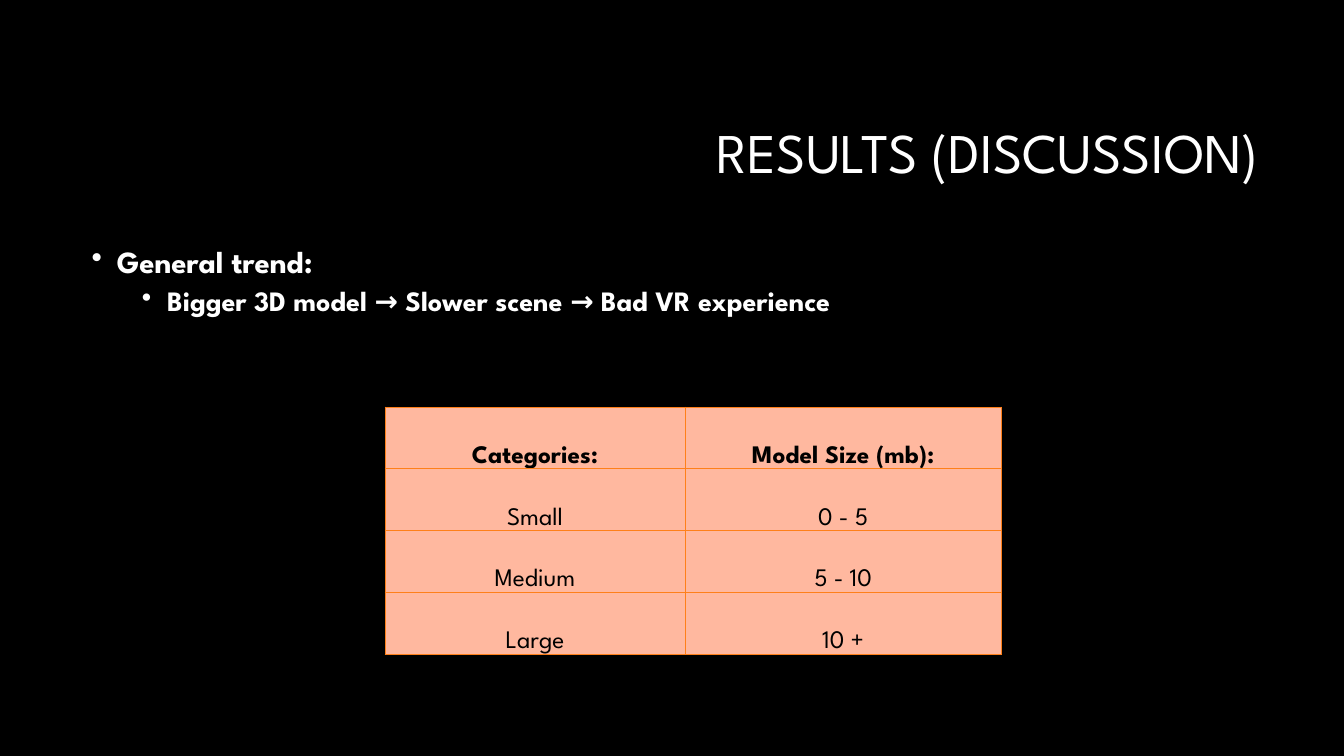
import lxml.etree
import pptx
import pptx.dml.color
import pptx.enum.text
import pptx.oxml.ns
import pptx.util

Pt = pptx.util.Pt
ALIGN = pptx.enum.text.PP_ALIGN
ANCHOR = pptx.enum.text.MSO_ANCHOR
COLORS = {"black": "000000", "white": "FFFFFF", "peach": "FFB89F", "orange": "FE801A"}


def rgb(name):
    return pptx.dml.color.RGBColor.from_string(COLORS[name])


def write(para, text, size=18, color="white", bold=False, align=ALIGN.LEFT,
          spacing=None, before=None, indent=None):
    if indent is not None:
        properties = para._p.get_or_add_pPr()
        properties.set("marL", str(Pt(indent)))
        properties.set("indent", str(Pt(-18)))
        lxml.etree.SubElement(properties, pptx.oxml.ns.qn("a:buChar"), char="•")
    para.alignment = align
    para.line_spacing = spacing
    para.space_before = before
    span = para.add_run()
    span.text = text
    span.font.name = "League Spartan"
    span.font.size = Pt(size)
    span.font.bold = bold
    span.font.color.rgb = rgb(color)


# Slide with black background
deck = pptx.Presentation()
deck.slide_width, deck.slide_height = Pt(960), Pt(540)
page = deck.slides.add_slide(deck.slide_layouts[6])
page.background.fill.solid()
page.background.fill.fore_color.rgb = rgb("black")

# Title
title = page.shapes.add_textbox(Pt(228), Pt(60.5), Pt(678.4), Pt(101.5)).text_frame
title.word_wrap = True
title.vertical_anchor = ANCHOR.MIDDLE
write(title.paragraphs[0], "RESULTS (DISCUSSION)", size=40, align=ALIGN.RIGHT, spacing=0.9)

# Bullets
body = page.shapes.add_textbox(Pt(58.3), Pt(172.8), Pt(843.8), Pt(316.8)).text_frame
body.word_wrap = True
write(body.paragraphs[0], "General trend:", size=22, bold=True, spacing=0.9, indent=18)
detail = body.add_paragraph()
detail.level = 1
write(detail, "Bigger 3D model → Slower scene → Bad VR experience",
      size=20, bold=True, spacing=0.9, before=Pt(5), indent=54)

# Size categories table
rows = [
    ("Categories:", "Model Size (mb):"),
    ("Small", "0 - 5"),
    ("Medium", "5 - 10"),
    ("Large", "10 +"),
]
widths = [214.4, 225.8]
row_height = 44.15
table = page.shapes.add_table(len(rows), len(widths), Pt(275), Pt(290.8),
                              Pt(sum(widths)), Pt(row_height * len(rows))).table
for column, width in zip(table.columns, widths):
    column.width = Pt(width)
for row_index, texts in enumerate(rows):
    table.rows[row_index].height = Pt(row_height)
    for column_index, text in enumerate(texts):
        cell = table.cell(row_index, column_index)
        cell.vertical_anchor = ANCHOR.BOTTOM
        cell.margin_left = cell.margin_right = Pt(2)
        cell.margin_top = cell.margin_bottom = Pt(0)
        properties = cell._tc.get_or_add_tcPr()
        for side in ("lnL", "lnR", "lnT", "lnB"):
            border = lxml.etree.SubElement(properties, pptx.oxml.ns.qn("a:" + side), w=str(Pt(0.75)))
            fill = lxml.etree.SubElement(border, pptx.oxml.ns.qn("a:solidFill"))
            lxml.etree.SubElement(fill, pptx.oxml.ns.qn("a:srgbClr"), val=COLORS["orange"])
        cell.fill.solid()
        cell.fill.fore_color.rgb = rgb("peach")
        write(cell.text_frame.paragraphs[0], text, color="black",
              bold=row_index == 0, align=ALIGN.CENTER)

deck.save("out.pptx")
